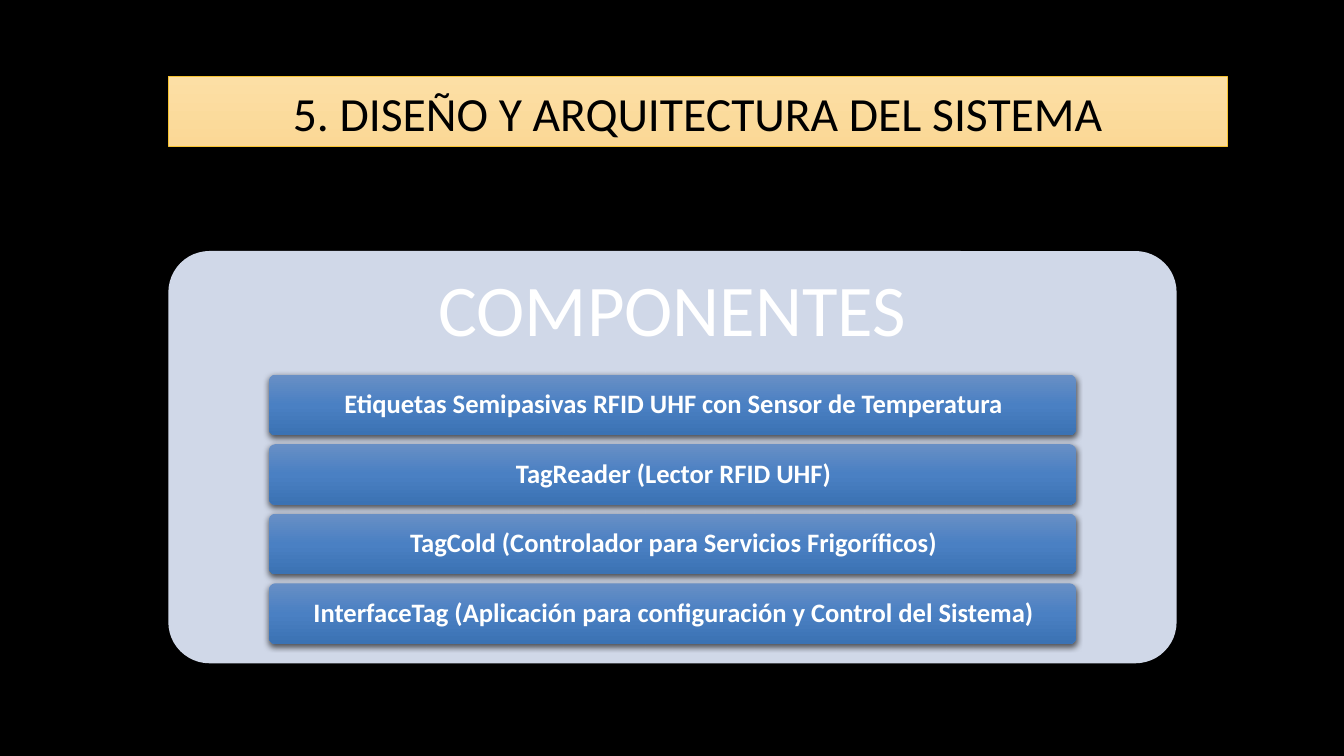
from copy import deepcopy
from lxml import etree
from pptx import Presentation
from pptx.dml.color import RGBColor
from pptx.enum.shapes import MSO_SHAPE
from pptx.enum.text import MSO_ANCHOR, PP_ALIGN
from pptx.oxml.ns import qn
from pptx.util import Inches, Pt

RECT, ROUND = MSO_SHAPE.RECTANGLE, MSO_SHAPE.ROUNDED_RECTANGLE
MIDDLE, BOTTOM = MSO_ANCHOR.MIDDLE, MSO_ANCHOR.BOTTOM
CENTER = PP_ALIGN.CENTER
BLACK = RGBColor(0x00, 0x00, 0x00)
WHITE = RGBColor(0xFF, 0xFF, 0xFF)
GOLD = RGBColor(0xF7, 0xC3, 0x31)
SAND = [RGBColor(0xFC, 0xDF, 0xA5), RGBColor(0xFB, 0xD8, 0x96)]
PALE = [RGBColor(0xD0, 0xD8, 0xE8)]
BLUE = [RGBColor(0x68, 0x8F, 0xC5), RGBColor(0x4A, 0x80, 0xC3), RGBColor(0x3B, 0x72, 0xB3)]

deck = Presentation()
deck.slide_width, deck.slide_height = Inches(13.33), Inches(7.5)
slide = deck.slides.add_slide(deck.slide_layouts[6])
slide.background.fill.solid()
slide.background.fill.fore_color.rgb = BLACK


def add_box(kind, area, tones, text, size, color, inset, anchor=MIDDLE):
    box = slide.shapes.add_shape(kind, *map(Inches, area))
    if kind == ROUND:
        box.adjustments[0] = 0.1
    fill = box.fill
    if len(tones) == 1:
        fill.solid()
        fill.fore_color.rgb = tones[0]
    else:
        fill.gradient()
        fill.gradient_angle = 270
        stops = box._element.spPr.find(qn("a:gradFill")).find(qn("a:gsLst"))
        for _ in tones[2:]:
            stops.append(deepcopy(stops[0]))
        for i, (stop, tone) in enumerate(zip(fill.gradient_stops, tones)):
            stop.position = i / (len(tones) - 1)
            stop.color.rgb = tone
    box.line.fill.background()
    box.shadow.inherit = False
    frame = box.text_frame
    frame.word_wrap = True
    frame.vertical_anchor = anchor
    frame.margin_left, frame.margin_top, frame.margin_right, frame.margin_bottom = map(Inches, inset)
    line = frame.paragraphs[0]
    line.text = text
    line.alignment = CENTER
    line.font.name = "Calibri"
    line.font.size = Pt(size)
    line.font.color.rgb = color
    return box


def add_shade(box, alpha, blur, dist):
    effects = box._element.spPr.find(qn("a:effectLst"))
    shade = etree.SubElement(effects, qn("a:outerShdw"), blurRad=str(Pt(blur)),
                             dist=str(Pt(dist)), dir="5400000", rotWithShape="0")
    tint = etree.SubElement(shade, qn("a:srgbClr"), val=str(BLACK))
    etree.SubElement(tint, qn("a:alpha"), val=str(alpha * 1000))


title = add_box(RECT, (1.67, 0.76, 10.5, 0.69), SAND, "5. DISEÑO Y ARQUITECTURA DEL SISTEMA",
                34, BLACK, (0.1, 0.05, 0.1, 0.05), BOTTOM)
title.line.color.rgb = GOLD
title.line.width = Pt(0.5)

left, top, width, height = 1.67, 2.49, 10, 4.09
panel = add_box(ROUND, (left, top, width, height), PALE, "COMPONENTES",
                52, WHITE, (0.22, 0.22, 0.22, 3.08))
panel.text_frame.paragraphs[0].line_spacing = 0.9
add_shade(panel, 35, 3.1, 1.8)

parts = [
    "Etiquetas Semipasivas RFID UHF con Sensor de Temperatura",
    "TagReader (Lector RFID UHF)",
    "TagCold (Controlador para Servicios Frigoríficos)",
    "InterfaceTag (Aplicación para configuración y Control del Sistema)",
]
first, pitch = top + 0.3 * height, 0.69
for row, part in enumerate(parts):
    bar = add_box(ROUND, (left + 0.1 * width, first + row * pitch, 0.8 * width, 0.6), BLUE, part,
                  19, WHITE, (0.07, 0.06, 0.05, 0.06))
    label = bar.text_frame.paragraphs[0]
    label.line_spacing = 0.9
    label.font.bold = True
    add_shade(bar, 63, 4.5, 1.5)

deck.save("out.pptx")
